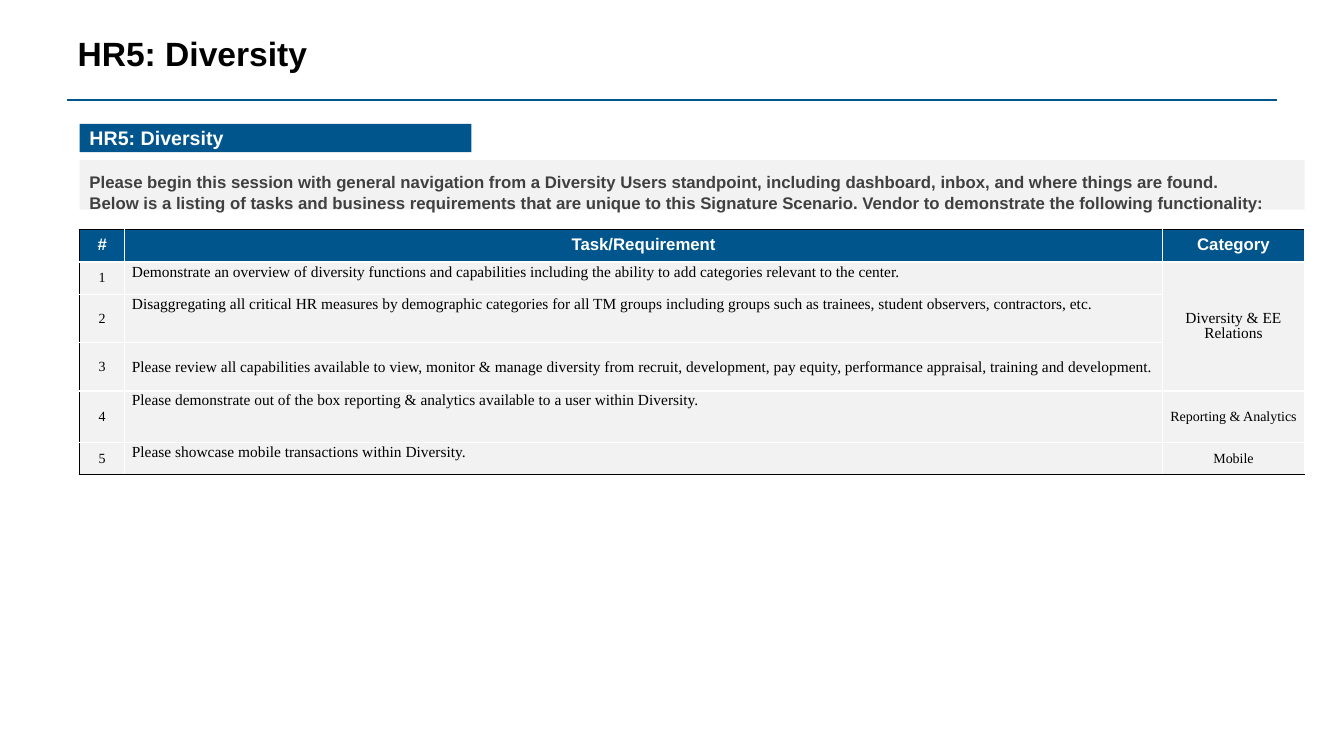
import dataclasses

import pptx
import pptx.dml.color
import pptx.enum.shapes
import pptx.enum.text
import pptx.oxml
import pptx.oxml.ns
import pptx.util

ALIGN = pptx.enum.text.PP_ALIGN
ANCHOR = pptx.enum.text.MSO_ANCHOR
SLIDE_WIDTH, SLIDE_HEIGHT = pptx.util.Inches(13.34), pptx.util.Inches(7.5)
COLUMN, ROW = SLIDE_WIDTH / 100, SLIDE_HEIGHT / 100


@dataclasses.dataclass(frozen=True)
class Theme:
    """Colours, fonts and type sizes of the slide."""
    blue: str = "00558C"
    grey: str = "F2F2F2"
    ink: str = "404040"
    black: str = "000000"
    white: str = "FFFFFF"
    sans: str = "Arial"
    serif: str = "Times New Roman"
    title: int = 24
    tag: int = 14
    lead: int = 12
    task: int = 11
    label: int = 10


THEME = Theme()
HEADING = "HR5: Diversity"
INTRO = [
    "Please begin this session with general navigation from a Diversity Users standpoint, "
    "including dashboard, inbox, and where things are found.",
    "Below is a listing of tasks and business requirements that are unique to this Signature "
    "Scenario. Vendor to demonstrate the following functionality:",
]
HEADERS = ["#", "Task/Requirement", "Category"]
TASKS = [
    ("Demonstrate an overview of diversity functions and capabilities including the ability "
     "to add categories relevant to the center.", "Diversity & EE Relations"),
    ("Disaggregating all critical HR measures by demographic categories for all TM groups "
     "including groups such as trainees, student observers, contractors, etc.", ""),
    ("Please review all capabilities available to view, monitor & manage diversity from "
     "recruit, development, pay equity, performance appraisal, training and development.", ""),
    ("Please demonstrate out of the box reporting & analytics available to a user within "
     "Diversity.", "Reporting & Analytics"),
    ("Please showcase mobile transactions within Diversity.", "Mobile"),
]
COLUMN_WEIGHTS = [0.45, 10.3, 1.41]
ROW_WEIGHTS = [0.32, 0.32, 0.48, 0.48, 0.51, 0.32]


def grid_box(left, top, width, height):
    """Turn grid columns and rows into slide lengths."""
    return int(left * COLUMN), int(top * ROW), int(width * COLUMN), int(height * ROW)


def rgb(colour):
    """Return a colour object for a hex value."""
    return pptx.dml.color.RGBColor.from_string(colour)


def assign(target, values):
    """Set every attribute named in a dict of format values."""
    for name, value in values.items():
        setattr(target, name, value)


def write(frame, lines, size, colour, face=THEME.sans, bold=True, align=ALIGN.LEFT, spacing=None):
    """Fill a text frame with equally formatted paragraphs."""
    for index, line in enumerate(lines):
        paragraph = frame.add_paragraph() if index else frame.paragraphs[0]
        run = paragraph.add_run()
        run.text = line
        assign(paragraph, {"alignment": align, "line_spacing": spacing})
        assign(run.font, {"size": pptx.util.Pt(size), "name": face, "bold": bold})
        run.font.color.rgb = rgb(colour)


def add_panel(slide, box, colour):
    """Add a plain filled rectangle."""
    panel = slide.shapes.add_shape(pptx.enum.shapes.MSO_SHAPE.RECTANGLE, *box)
    panel.shadow.inherit = False
    panel.fill.solid()
    panel.fill.fore_color.rgb = rgb(colour)
    panel.line.fill.background()
    return panel


def add_title(slide, box):
    """Place the title and the rule below it."""
    left, top, width, height = box
    title = slide.shapes.title
    assign(title, dict(zip(("left", "top", "width", "height"), box)))
    assign(title.text_frame, {"vertical_anchor": ANCHOR.TOP, "word_wrap": True})
    write(title.text_frame, [HEADING], THEME.title, THEME.black, spacing=0.9)
    rule_y = top + int(height * 1.03)
    rule = slide.shapes.add_connector(
        pptx.enum.shapes.MSO_CONNECTOR.STRAIGHT, left, rule_y, left + width, rule_y)
    rule.line.color.rgb = rgb(THEME.blue)
    rule.line.width = pptx.util.Pt(1.5)
    rule._element.spPr.append(pptx.oxml.parse_xml(
        f'<a:effectLst {pptx.oxml.ns.nsdecls("a")}/>'))


def add_intro(slide, box):
    """Write the introduction, set slightly below the top of its panel."""
    left, top, width, height = box
    intro = slide.shapes.add_textbox(left, top + int(height * 0.14), width, height)
    intro.text_frame.word_wrap = True
    write(intro.text_frame, INTRO, THEME.lead, THEME.ink)


def add_tag(slide, box):
    """Add the coloured section tag."""
    tag = add_panel(slide, box, THEME.blue)
    assign(tag.text_frame, {"vertical_anchor": ANCHOR.MIDDLE, "word_wrap": True})
    write(tag.text_frame, [HEADING], THEME.tag, THEME.white)


def style_cell(cell, fill, edges, side, end, anchor):
    """Set the borders, fill, margins and anchor of a cell."""
    properties = cell._tc.get_or_add_tcPr()
    for edge, colour in edges.items():
        properties.append(pptx.oxml.parse_xml(
            f'<a:{edge} {pptx.oxml.ns.nsdecls("a")} w="12700"><a:solidFill>'
            f'<a:srgbClr val="{colour}"/></a:solidFill></a:{edge}>'))
    cell.fill.solid()
    cell.fill.fore_color.rgb = rgb(fill)
    side, end = pptx.util.Inches(side), pptx.util.Inches(end)
    assign(cell, {"margin_left": side, "margin_right": side, "margin_top": end,
                  "margin_bottom": end, "vertical_anchor": anchor})


def add_task_table(slide, box):
    """Add the table of tasks and their categories."""
    rows = [HEADERS] + [(str(i), *task) for i, task in enumerate(TASKS, 1)]
    table = slide.shapes.add_table(len(rows), len(HEADERS), *box).table
    table.horz_banding = False
    for column, weight in zip(table.columns, COLUMN_WEIGHTS):
        column.width = int(box[2] * weight / sum(COLUMN_WEIGHTS))
    for row, weight in zip(table.rows, ROW_WEIGHTS):
        row.height = int(box[3] * weight / sum(ROW_WEIGHTS))
    table.cell(1, 2).merge(table.cell(3, 2))
    exact = pptx.util.Pt(11)
    for r, values in enumerate(rows):
        for c, text in enumerate(values):
            cell = table.cell(r, c)
            is_header, is_task = r == 0, r > 0 and c == 1
            edges = {"lnL": THEME.white if c else THEME.black, "lnR": THEME.white,
                     "lnT": THEME.white if r else THEME.black,
                     "lnB": THEME.black if r == len(rows) - 1 else THEME.white}
            style_cell(cell, THEME.blue if is_header else THEME.grey, edges,
                       0.07 if is_task else 0.05, 0 if is_task else 0.05,
                       ANCHOR.TOP if is_task and r != 3 else ANCHOR.MIDDLE)
            if is_header:
                write(cell.text_frame, [text], THEME.lead, THEME.white,
                      align=ALIGN.CENTER, spacing=exact)
            elif is_task:
                write(cell.text_frame, [text], THEME.task, THEME.black, THEME.serif, False,
                      spacing=1.07)
            elif text:
                size = THEME.task if (r, c) == (1, 2) else THEME.label
                write(cell.text_frame, [text], size, THEME.black, THEME.serif, False,
                      ALIGN.CENTER, exact)


def add_scenario_slide(deck):
    """Build the scenario slide from its regions."""
    slide = deck.slides.add_slide(deck.slide_layouts[5])
    intro_box = grid_box(5.92, 21.2, 91.15, 6.53)
    add_title(slide, grid_box(5.02, 4.27, 90.03, 8.67))
    add_panel(slide, intro_box, THEME.grey)
    add_task_table(slide, grid_box(5.92, 30.4, 91.15, 32.4))
    add_intro(slide, intro_box)
    add_tag(slide, grid_box(5.92, 16.4, 29.16, 3.73))


def main():
    """Create and save the deck."""
    deck = pptx.Presentation()
    assign(deck, {"slide_width": SLIDE_WIDTH, "slide_height": SLIDE_HEIGHT})
    add_scenario_slide(deck)
    deck.save("out.pptx")


if __name__ == "__main__":
    main()
